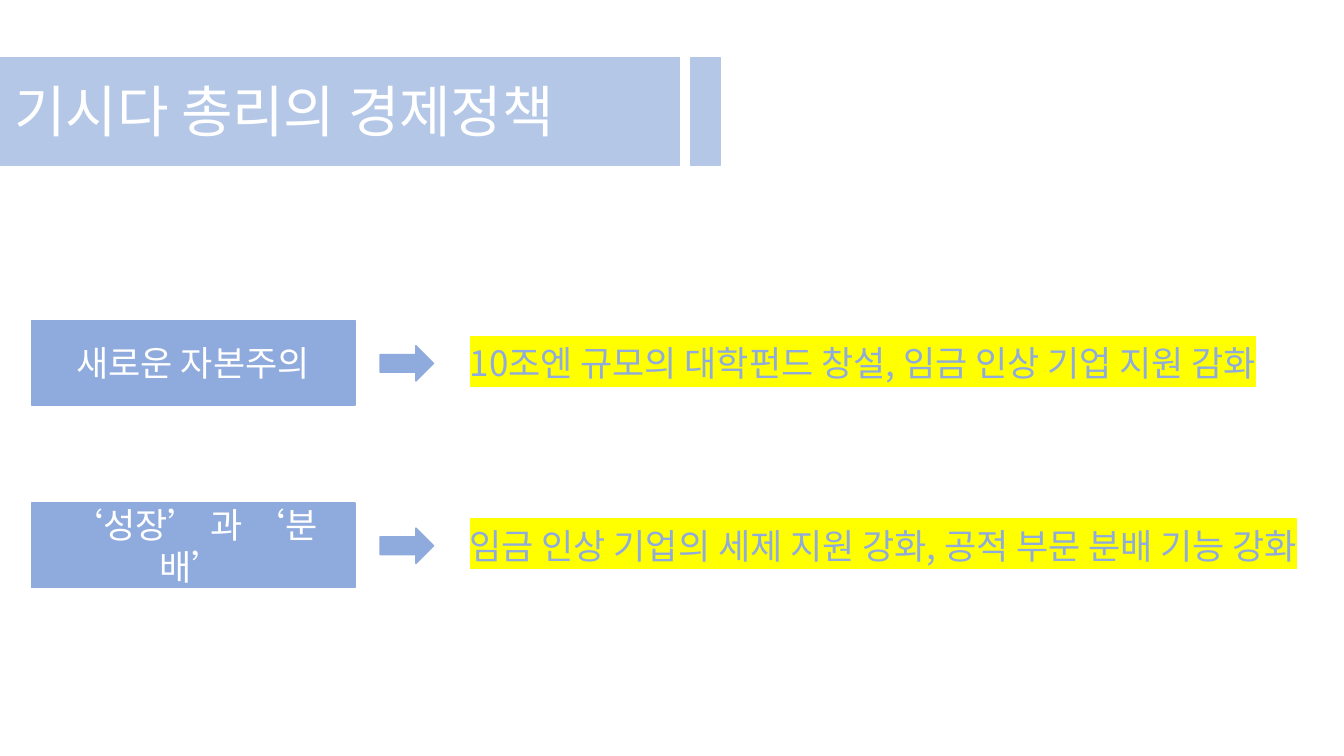
from dataclasses import dataclass

from lxml.etree import SubElement
from pptx import Presentation
from pptx.dml.color import RGBColor
from pptx.enum.shapes import MSO_SHAPE
from pptx.enum.text import MSO_ANCHOR, MSO_AUTO_SIZE, PP_ALIGN
from pptx.oxml.ns import qn
from pptx.util import Inches, Pt


@dataclass(frozen=True)
class Theme:
    font: str = "Noto Sans CJK KR"
    pale: str = "B4C7E7"
    blue: str = "8FAADC"
    white: str = "FFFFFF"
    mark: str = "FFFF00"
    head: int = 40
    body: int = 25
    line: int = 1


class Deck:
    """Style and current slide; places are percent of slide width and height."""

    def __init__(self, theme):
        self.theme = theme
        self.show = Presentation()
        self.show.slide_width = Inches(13.33)
        self.show.slide_height = Inches(7.5)
        self.slide = self.show.slides.add_slide(self.show.slide_layouts[5])

    def place(self, x, y, w, h):
        wide, high = self.show.slide_width, self.show.slide_height
        return [int(part * full / 100)
                for part, full in zip((x, y, w, h), (wide, high, wide, high))]

    def text(self, shape, words, size, color, align, anchor, mark=None):
        frame = shape.text_frame
        form = {"word_wrap": True, "auto_size": MSO_AUTO_SIZE.NONE,
                "vertical_anchor": anchor}
        for name, value in form.items():
            setattr(frame, name, value)
        para = frame.paragraphs[0]
        para.alignment = align
        run = para.add_run()
        run.text = words
        run.font.size = Pt(size)
        run.font.color.rgb = RGBColor.from_string(color)
        props = run.font._element
        if mark:
            light = SubElement(props, qn("a:highlight"))
            SubElement(light, qn("a:srgbClr"), val=mark)
        for tag in ("a:latin", "a:ea"):
            SubElement(props, qn(tag), typeface=self.theme.font)

    def shape(self, kind, box, color):
        shape = self.slide.shapes.add_shape(kind, *self.place(*box))
        shape.shadow.inherit = False
        shape.fill.solid()
        for paint in (shape.fill.fore_color, shape.line.color):
            paint.rgb = RGBColor.from_string(color)
        shape.line.width = Pt(self.theme.line)
        return shape

    def title(self, words, box):
        title = self.slide.shapes.title
        for name, value in zip(("left", "top", "width", "height"), self.place(*box)):
            setattr(title, name, value)
        self.text(title, words, self.theme.head, self.theme.white,
                  PP_ALIGN.LEFT, MSO_ANCHOR.TOP)
        # Bring the title in front of its band
        self.slide.shapes._spTree.append(title._element)

    def label(self, words, box):
        shape = self.shape(MSO_SHAPE.RECTANGLE, box, self.theme.blue)
        self.text(shape, words, self.theme.body, self.theme.white,
                  PP_ALIGN.CENTER, MSO_ANCHOR.MIDDLE)

    def arrow(self, box):
        self.shape(MSO_SHAPE.RIGHT_ARROW, box, self.theme.blue)

    def note(self, words, box):
        shape = self.slide.shapes.add_textbox(*self.place(*box))
        self.text(shape, words, self.theme.body, self.theme.blue,
                  PP_ALIGN.LEFT, MSO_ANCHOR.TOP, self.theme.mark)


def main():
    deck = Deck(Theme())

    # Title band
    for x, w in ((0, 50.56), (51.39, 2.18)):
        deck.shape(MSO_SHAPE.RECTANGLE, (x, 7.6, w, 14.27), deck.theme.pale)
    deck.title("기시다 총리의 경제정책", (0.3, 9.47, 45.1, 10.27))

    # Policy rows: label, arrow, measures
    rows = (
        ("새로운 자본주의", "10조엔 규모의 대학펀드 창설, 임금 인상 기업 지원 감화"),
        ("‘성장’ 과 ‘분배’", "임금 인상 기업의 세제 지원 강화, 공적 부문 분배 기능 강화"),
    )
    top, step = 42.4, 24.13
    for index, (name, words) in enumerate(rows):
        y = top + index * step
        deck.label(name, (2.33, y, 24.08, 11.2))
        deck.arrow((28.28, y + 3.33, 3.98, 4.67))
        deck.note(words, (34.21, y + 2.13, 66.4, 6.93))

    deck.show.save("out.pptx")


if __name__ == "__main__":
    main()
